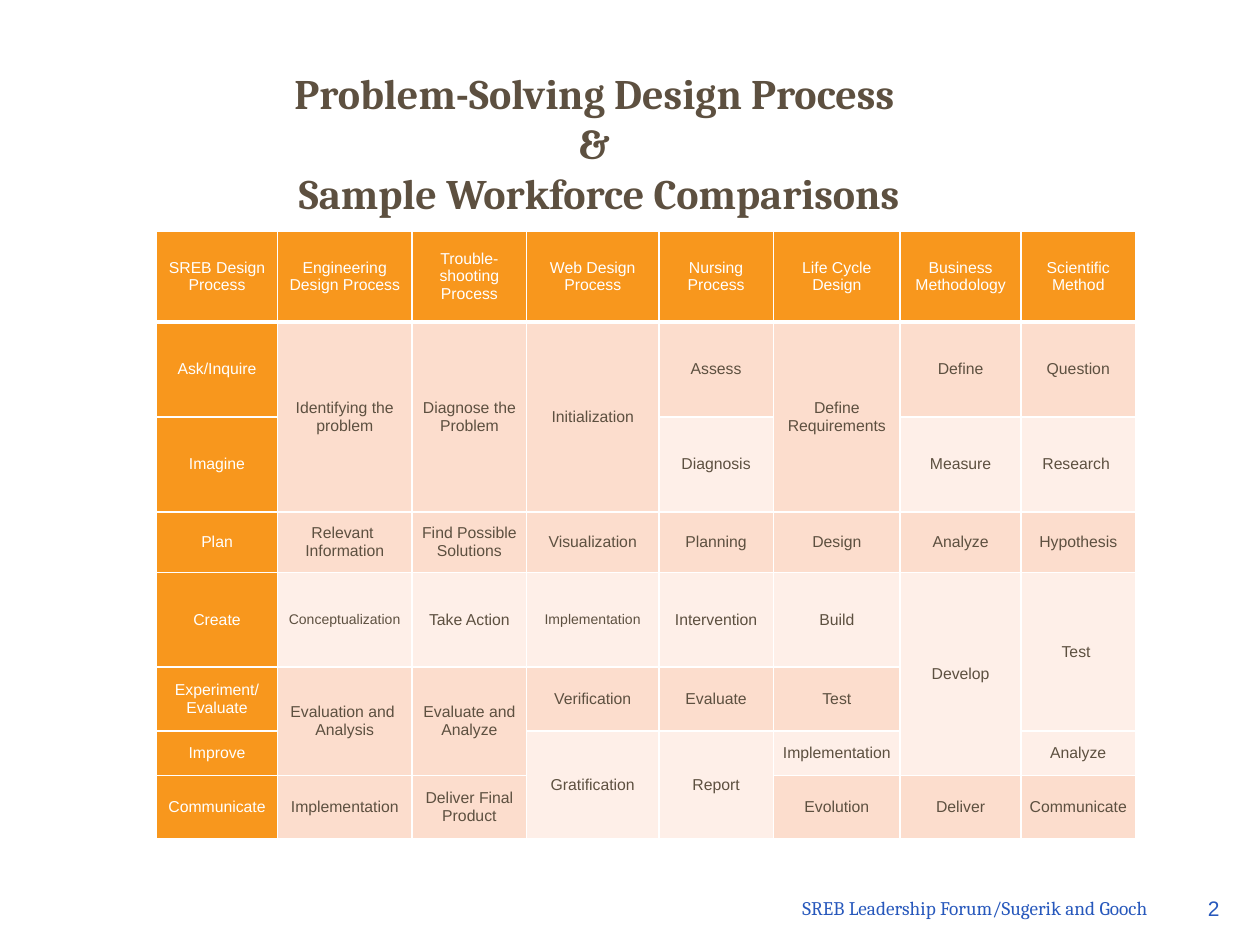
import pptx
import pptx.util
import pptx.dml.color
import pptx.enum.text
from dataclasses import dataclass
from lxml import etree

Pt = pptx.util.Pt
Align = pptx.enum.text.PP_ALIGN
Anchor = pptx.enum.text.MSO_ANCHOR


@dataclass(frozen=True)
class Theme:
    brown: str = "5D5040"
    white: str = "FFFFFF"
    blue: str = "2758BC"
    orange: str = "F8971D"
    peach: str = "FCDDCD"
    pale: str = "FEEFE8"
    serif: str = "Cambria"
    sans: str = "Arial"
    title: float = 24
    foot: float = 11
    page: float = 12
    cell: float = 9
    small: float = 8


THEME = Theme()
UP = "^"  # cell joined to the one above

COLS = [69, 77, 65.5, 75.5, 65.5, 72.5, 69, 65.5]
ROWS = [52, 54.3, 54.3, 34.5, 54, 36.7, 25.3, 36]
STEPS = [
    ["SREB Design\nProcess", "Engineering\nDesign Process", "Trouble-shooting\nProcess",
     "Web Design Process", "Nursing Process", "Life Cycle Design",
     "Business Methodology", "Scientific Method"],
    ["Ask/Inquire", "Identifying the problem", "Diagnose the Problem",
     "Initialization", "Assess", "Define Requirements", "Define", "Question"],
    ["Imagine", UP, UP, UP, "Diagnosis", UP, "Measure", "Research "],
    ["Plan", "Relevant \nInformation", "Find Possible Solutions",
     "Visualization", "Planning", "Design", "Analyze", "Hypothesis"],
    ["Create", "Conceptualization", "Take Action", "Implementation",
     "Intervention", "Build", "Develop", "Test "],
    ["Experiment/\nEvaluate", "Evaluation and \nAnalysis", "Evaluate and Analyze",
     "Verification", "Evaluate", "Test", UP, UP],
    ["Improve", UP, UP, "Gratification", "Report", "Implementation", UP, "Analyze"],
    ["Communicate", "Implementation", "Deliver Final Product", UP, UP,
     "Evolution", "Deliver", "Communicate"],
]
SMALL = {(4, 1), (4, 3)}  # long words set one size down


def rgb(code):
    return pptx.dml.color.RGBColor.from_string(code)


def write(frame, text, size, face, color, align, bold=False):
    for i, line in enumerate(text.split("\n")):
        para = frame.paragraphs[0] if i == 0 else frame.add_paragraph()
        para.alignment = align
        run = para.add_run()
        run.text = line
        run.font.size = Pt(size)
        run.font.name = face
        run.font.bold = bold
        run.font.color.rgb = rgb(color)


def add_text(slide, box, text, size, face, color, align, bold=False, pad=3.6):
    shape = slide.shapes.add_textbox(*map(Pt, box))
    frame = shape.text_frame
    frame.word_wrap = True
    frame.vertical_anchor = Anchor.MIDDLE
    frame.margin_bottom = Pt(pad)
    write(frame, text, size, face, color, align, bold)


def add_edges(cell, base):
    props = cell._tc.get_or_add_tcPr()
    for side in "LRTB":
        width = base if side == "B" else 1
        line = etree.SubElement(props, pptx.oxml.ns.qn("a:ln" + side), w=str(Pt(width)))
        fill = etree.SubElement(line, pptx.oxml.ns.qn("a:solidFill"))
        etree.SubElement(fill, pptx.oxml.ns.qn("a:srgbClr"), val=THEME.white)


def style(cell, row, col):
    head = row == 0 or col == 0
    add_edges(cell, 3 if row == 0 else 1)
    cell.fill.solid()
    band = THEME.peach if row % 2 else THEME.pale
    cell.fill.fore_color.rgb = rgb(THEME.orange if head else band)
    cell.vertical_anchor = Anchor.MIDDLE
    cell.margin_left = cell.margin_right = Pt(4.3)
    cell.margin_top = cell.margin_bottom = 0
    text = STEPS[row][col]
    if text != UP:
        size = THEME.small if (row, col) in SMALL else THEME.cell
        color = THEME.white if head else THEME.brown
        write(cell.text_frame, text, size, THEME.sans, color, Align.CENTER)


def add_grid(slide, left, top):
    frame = slide.shapes.add_table(len(ROWS), len(COLS), Pt(left), Pt(top),
                                   Pt(sum(COLS)), Pt(sum(ROWS)))
    grid = frame.table
    for col, width in zip(grid.columns, COLS):
        col.width = Pt(width)
    for row, height in zip(grid.rows, ROWS):
        row.height = Pt(height)
    for r in range(len(ROWS)):
        for c in range(len(COLS)):
            style(grid.cell(r, c), r, c)
    # Join each step with the open cells below it
    for c in range(len(COLS)):
        for r in range(len(ROWS)):
            end = r
            while end + 1 < len(ROWS) and STEPS[end + 1][c] == UP:
                end += 1
            if STEPS[r][c] != UP and end > r:
                grid.cell(r, c).merge(grid.cell(end, c))


def add_title(slide, box):
    text = "Problem-Solving Design Process \n& \nSample Workforce Comparisons"
    add_text(slide, box, text, THEME.title, THEME.serif, THEME.brown,
             Align.CENTER, bold=True, pad=23)


def add_foot(slide, left, top, width, height):
    num = 41
    add_text(slide, (left, top, width - num, height),
             "SREB Leadership Forum/Sugerik and Gooch",
             THEME.foot, THEME.serif, THEME.blue, Align.RIGHT)
    add_text(slide, (left + width - num, top, num, height), "2",
             THEME.page, THEME.sans, THEME.blue, Align.RIGHT)


def main():
    deck = pptx.Presentation()
    deck.slide_width, deck.slide_height = Pt(720), Pt(540)
    slide = deck.slides.add_slide(deck.slide_layouts[6])
    add_grid(slide, 89.5, 132)
    add_title(slide, (88.5, 33, 507.5, 116.5))
    add_foot(slide, 366, 502.5, 338, 32.5)
    deck.save("out.pptx")


if __name__ == "__main__":
    main()
